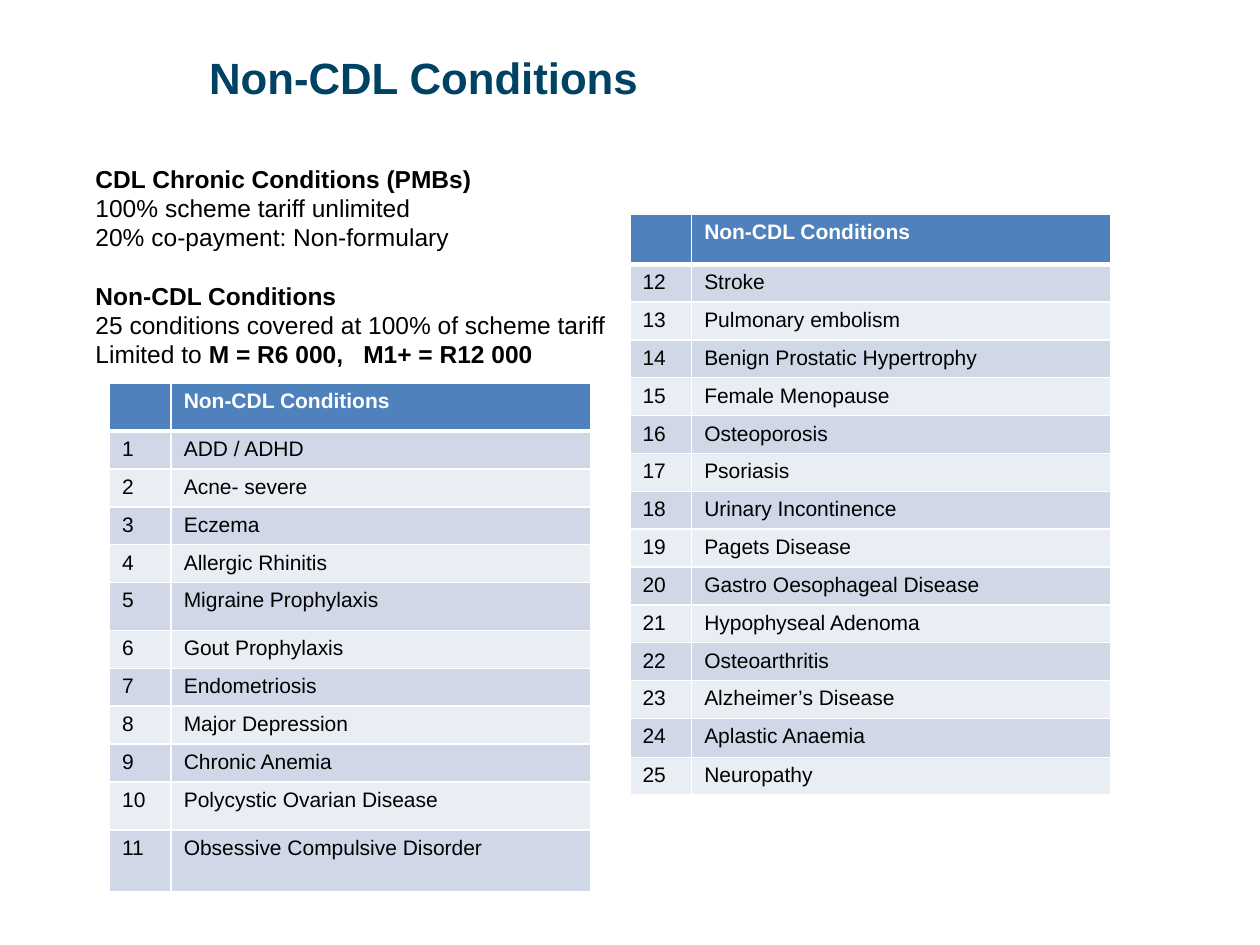
from dataclasses import dataclass

from lxml import etree
from pptx import Presentation
from pptx.dml.color import RGBColor
from pptx.enum.text import MSO_ANCHOR, PP_ALIGN
from pptx.oxml.ns import qn
from pptx.util import Pt

LEFT = PP_ALIGN.LEFT
JUSTIFY = PP_ALIGN.JUSTIFY
TOP = MSO_ANCHOR.TOP
TITLE_ONLY = 5


@dataclass(frozen=True)
class Theme:
    font: str = "Arial"
    title: str = "004264"
    text: str = "000000"
    white: str = "FFFFFF"
    header: str = "4F81BD"
    bands: tuple = ("D0D8E8", "E9EDF4")
    title_size: float = 25
    body_size: float = 14
    table_size: float = 12
    line_spacing: float = 16.75
    row_height: float = 21.6


THEME = Theme()

# Each group is a heading followed by its lines; a line is a list of (text, bold).
BENEFITS = [
    ("CDL Chronic Conditions (PMBs)", [
        [("100% scheme tariff unlimited", False)],
        [("20% co-payment: Non-formulary", False)],
    ]),
    ("Non-CDL Conditions", [
        [("25 conditions covered at 100% of scheme tariff", False)],
        [("Limited to ", False), ("M = R6 000,\tM1+ = R12 000", True)],
    ]),
]
CONDITIONS = [
    "ADD / ADHD", "Acne- severe", "Eczema", "Allergic Rhinitis",
    "Migraine Prophylaxis", "Gout Prophylaxis", "Endometriosis",
    "Major Depression", "Chronic Anemia", "Polycystic Ovarian Disease",
    "Obsessive Compulsive Disorder", "Stroke", "Pulmonary embolism",
    "Benign Prostatic Hypertrophy", "Female Menopause", "Osteoporosis",
    "Psoriasis", "Urinary Incontinence", "Pagets Disease",
    "Gastro Oesophageal Disease", "Hypophyseal Adenoma", "Osteoarthritis",
    "Alzheimer’s Disease", "Aplastic Anaemia", "Neuropathy",
]
LEFT_COUNT = 11


def set_font(font, size, color, bold=None):
    font.name = THEME.font
    font.size = Pt(size)
    font.color.rgb = RGBColor.from_string(color)
    font.bold = bold


def add_title(slide, text, left, top, width, height):
    title = slide.shapes.title
    title.left, title.top = Pt(left), Pt(top)
    title.width, title.height = Pt(width), Pt(height)
    frame = title.text_frame
    frame.text = text
    frame.vertical_anchor = TOP
    frame.margin_left, frame.margin_top = Pt(83.5), Pt(6.5)
    paragraph = frame.paragraphs[0]
    paragraph.alignment = LEFT
    set_font(paragraph.font, THEME.title_size, THEME.title, True)


def add_tab_stop(paragraph, position):
    properties = paragraph._p.get_or_add_pPr()
    tabs = etree.SubElement(properties, qn("a:tabLst"))
    etree.SubElement(tabs, qn("a:tab"), pos=str(Pt(position)), algn="l")


def add_benefits(slide, groups, left, top, width, height):
    box = slide.shapes.add_textbox(Pt(left), Pt(top), Pt(width), Pt(height))
    frame = box.text_frame
    frame.word_wrap = True
    frame.margin_top = Pt(44.5)
    paragraph = None
    for heading, lines in groups:
        for index, line in enumerate([[(heading, True)], *lines]):
            is_first = paragraph is None
            paragraph = frame.paragraphs[0] if is_first else frame.add_paragraph()
            paragraph.alignment = JUSTIFY
            paragraph.line_spacing = Pt(THEME.line_spacing)
            starts_group = index == 0 and not is_first
            paragraph.space_before = Pt(THEME.line_spacing if starts_group else 0)
            if any("\t" in text for text, _ in line):
                add_tab_stop(paragraph, 153)
            set_font(paragraph.font, THEME.body_size, THEME.text)
            for text, bold in line:
                run = paragraph.add_run()
                run.text = text
                run.font.bold = bold


def set_borders(cell, widths):
    """Draw white borders; widths are left, right, top and bottom."""
    properties = cell._tc.get_or_add_tcPr()
    for position, (side, width) in enumerate(zip("LRTB", widths)):
        line = etree.Element(qn(f"a:ln{side}"), w=str(Pt(width)))
        fill = etree.SubElement(line, qn("a:solidFill"))
        etree.SubElement(fill, qn("a:srgbClr"), val=THEME.white)
        properties.insert(position, line)


def add_conditions(slide, conditions, first_number, left, top, width,
                   header_height, tall_rows):
    """Add a numbered table; tall_rows maps a number to its row height."""
    rows = [("", "Non-CDL Conditions")]
    rows += [(str(n), name) for n, name in enumerate(conditions, first_number)]
    heights = [header_height]
    heights += [tall_rows.get(first_number + i, THEME.row_height)
                for i in range(len(conditions))]
    table = slide.shapes.add_table(
        len(rows), 2, Pt(left), Pt(top), Pt(width), Pt(sum(heights))).table
    number_width = 35.25
    table.columns[0].width = Pt(number_width)
    table.columns[1].width = Pt(width - number_width)
    for row_index, (texts, height) in enumerate(zip(rows, heights)):
        table.rows[row_index].height = Pt(height)
        is_header = row_index == 0
        fill = THEME.header if is_header else THEME.bands[(row_index - 1) % 2]
        color = THEME.white if is_header else THEME.text
        widths = (1, 1, 3 if row_index == 1 else 1, 3 if is_header else 1)
        for column, text in enumerate(texts):
            cell = table.cell(row_index, column)
            cell.text = text
            cell.fill.solid()
            cell.fill.fore_color.rgb = RGBColor.from_string(fill)
            set_borders(cell, widths)
            set_font(cell.text_frame.paragraphs[0].font,
                     THEME.table_size, color, is_header)


def main():
    presentation = Presentation()
    presentation.slide_width, presentation.slide_height = Pt(720), Pt(540)
    slide = presentation.slides.add_slide(presentation.slide_layouts[TITLE_ONLY])
    add_title(slide, "Non-CDL Conditions", 36, 22.3, 395, 70)
    add_benefits(slide, BENEFITS, 47.5, 49, 312.5, 211)
    add_conditions(slide, CONDITIONS[:LEFT_COUNT], 1, 62.6, 219, 275,
                   27.4, {5: 27.4, 10: 27.4, 11: 35.6})
    add_conditions(slide, CONDITIONS[LEFT_COUNT:], LEFT_COUNT + 1, 360, 122.4, 275,
                   28.6, {24: 22.3})
    presentation.save("out.pptx")


if __name__ == "__main__":
    main()
